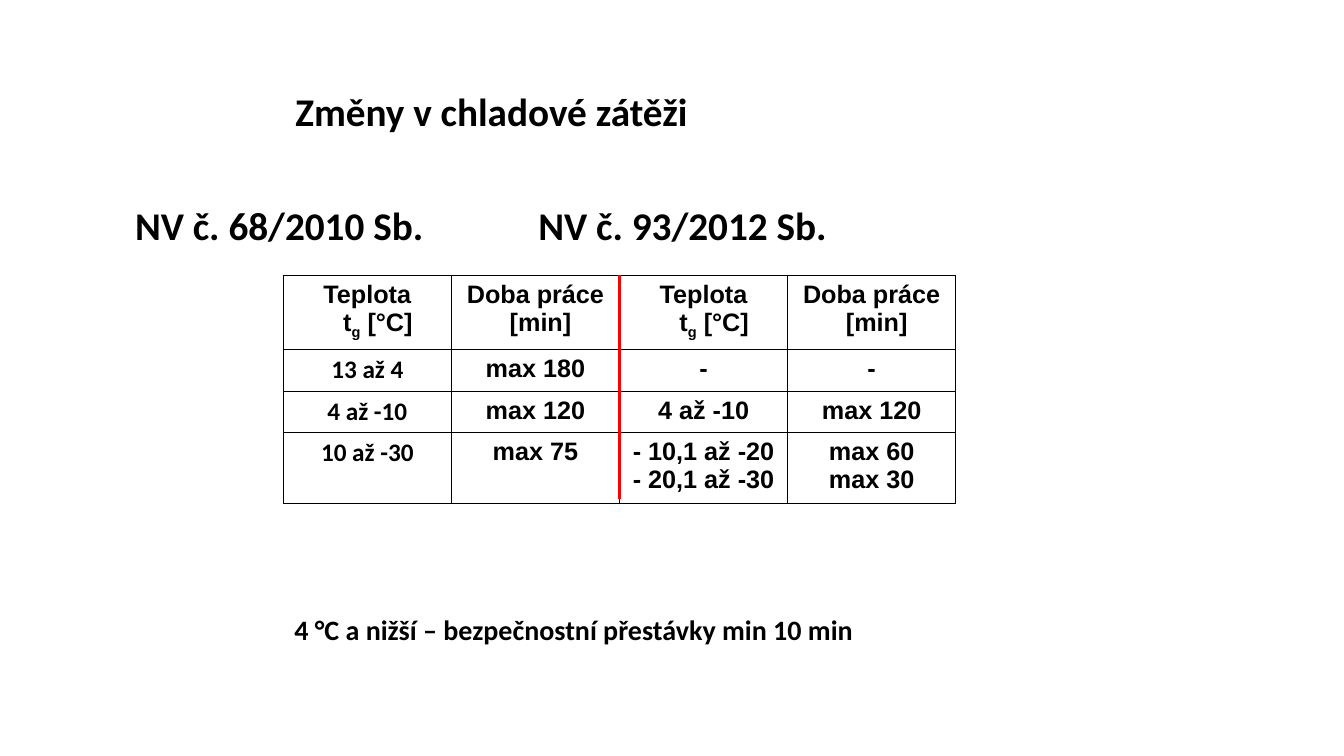
from lxml import etree
from pptx import Presentation
from pptx.dml.color import RGBColor
from pptx.enum.shapes import MSO_CONNECTOR
from pptx.enum.text import MSO_ANCHOR, PP_ALIGN
from pptx.oxml.ns import qn
from pptx.util import Inches, Pt

TOP, MIDDLE = MSO_ANCHOR.TOP, MSO_ANCHOR.MIDDLE
CENTER = PP_ALIGN.CENTER
STRAIGHT = MSO_CONNECTOR.STRAIGHT

COLORS = {"text": "000000", "grid": "000000", "split": "FF0000"}

# Table place and contents
LEFT, UPPER, WIDTH = 2.81, 2.73, 6.67
HEIGHTS = [0.7, 0.41, 0.41, 0.7]
HEADS = ["Teplota\nt", "Doba práce\n[min]"] * 2
ROWS = [
    HEADS,
    ["13 až 4", "max 180", "-", "-"],
    ["4 až -10", "max 120", "4 až -10", "max 120"],
    ["10 až -30", "max 75", "- 10,1 až -20\n- 20,1 až -30", "max 60\nmax 30"],
]


def style(font, size, name):
    font.size, font.name, font.bold = Pt(size), name, True
    font.color.rgb = RGBColor.from_string(COLORS["text"])


def add_text(slide, place, text, size, inset=0.1, anchor=TOP, tab=None, space=1.0):
    box = slide.shapes.add_textbox(*map(Inches, place))
    frame = box.text_frame
    frame.word_wrap = True
    frame.vertical_anchor = anchor
    frame.margin_left = Inches(inset)
    frame.text = text
    para = frame.paragraphs[0]
    para.line_spacing = space
    if tab:
        stops = etree.SubElement(para._p.get_or_add_pPr(), qn("a:tabLst"))
        etree.SubElement(stops, qn("a:tab"), pos=str(Inches(tab)), algn="l")
    for run in para.runs:
        style(run.font, size, "Calibri")


def add_grid(cell):
    props = cell._tc.get_or_add_tcPr()
    for side in ("lnL", "lnR", "lnT", "lnB"):
        line = etree.SubElement(props, qn("a:" + side), w=str(Pt(1)))
        fill = etree.SubElement(line, qn("a:solidFill"))
        etree.SubElement(fill, qn("a:srgbClr"), val=COLORS["grid"])


def fill_cell(cell, text, font, head):
    add_grid(cell)
    cell.fill.background()
    cell.text_frame.text = text
    paras = cell.text_frame.paragraphs
    if text == HEADS[0]:
        # Symbol with a lowered index, then its unit
        for part in ("g", " [°C]"):
            paras[1].add_run().text = part
        paras[1].runs[1].font._element.set("baseline", "-25000")
    for row, para in enumerate(paras):
        para.alignment = CENTER
        if head and row:
            indent = 0.21 if text == HEADS[0] else 0.1
            para._p.get_or_add_pPr().set("marL", str(Inches(indent)))
        for run in para.runs:
            style(run.font, 18, font)


def add_limits(slide):
    place = (LEFT, UPPER, WIDTH, sum(HEIGHTS))
    table = slide.shapes.add_table(len(ROWS), len(HEADS), *map(Inches, place)).table
    table.first_row = table.horz_banding = False
    for col in table.columns:
        col.width = Inches(WIDTH / len(HEADS))
    for r, (high, texts) in enumerate(zip(HEIGHTS, ROWS)):
        table.rows[r].height = Inches(high)
        for c, text in enumerate(texts):
            font = "Calibri" if r and c == 0 else "Arial"
            fill_cell(table.cell(r, c), text, font, r == 0)


def add_split(slide):
    mid = LEFT + WIDTH / 2
    ends = (mid, UPPER, mid, UPPER + sum(HEIGHTS))
    line = slide.shapes.add_connector(STRAIGHT, *map(Inches, ends))
    line.line.color.rgb = RGBColor.from_string(COLORS["split"])
    line.line.width = Pt(2.25)
    etree.SubElement(line._element.spPr, qn("a:effectLst"))


def main():
    deck = Presentation()
    deck.slide_width, deck.slide_height = Inches(13.33), Inches(7.5)
    slide = deck.slides.add_slide(deck.slide_layouts[6])

    # Title and the two regulations compared
    add_text(slide, (0.92, 0.4, 11.5, 1.45), "Změny v chladové zátěži", 28,
             inset=2.01, anchor=MIDDLE, space=0.9)
    add_text(slide, (0.92, 2, 11.5, 0.6), "NV č. 68/2010 Sb.\tNV č. 93/2012 Sb.", 28,
             inset=0.42, tab=4, space=0.9)

    # Work limits, old on the left and new on the right
    add_limits(slide)
    add_split(slide)

    # Note on breaks
    add_text(slide, (1.86, 6.03, 9.29, 0.43),
             "4 °C a nižší – bezpečnostní přestávky min 10 min", 20, inset=1.06)

    deck.save("out.pptx")


if __name__ == "__main__":
    main()
